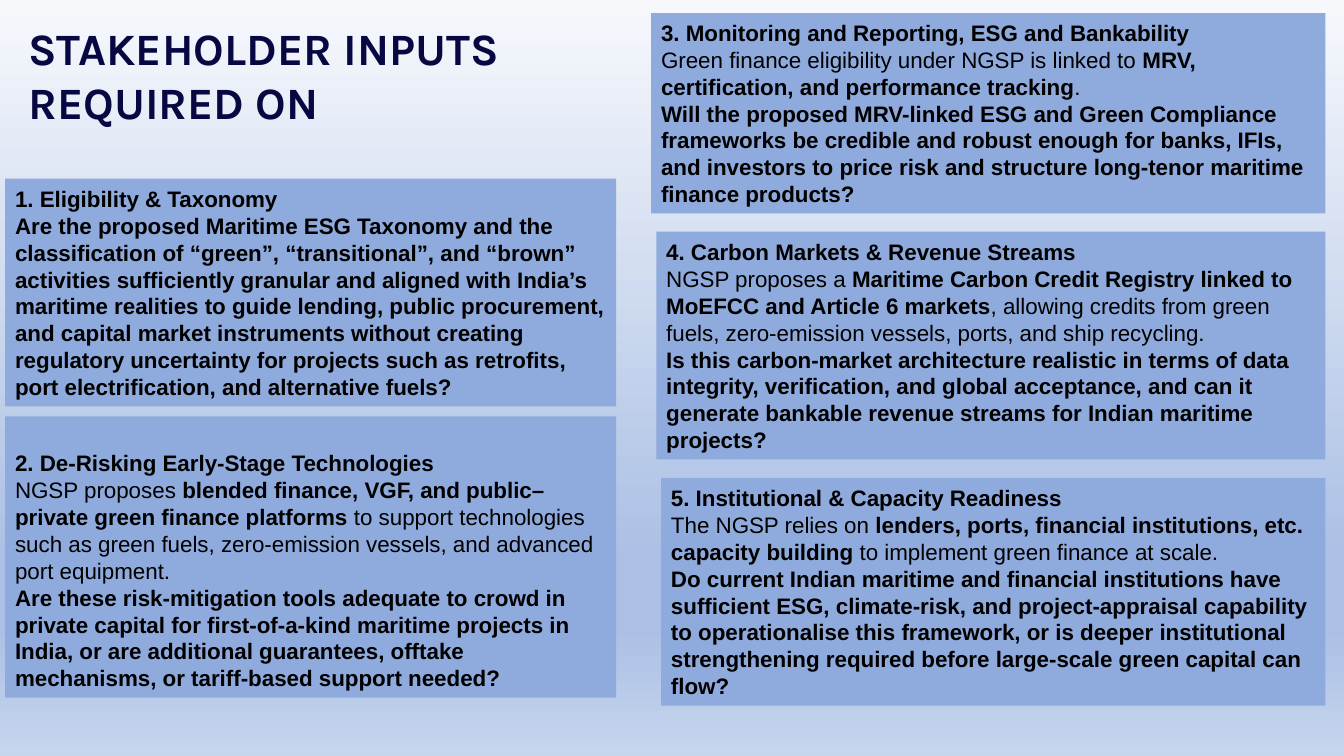
from dataclasses import dataclass

from lxml.etree import SubElement
from pptx import Presentation
from pptx.dml.color import RGBColor
from pptx.enum.shapes import MSO_SHAPE
from pptx.enum.text import MSO_ANCHOR, MSO_AUTO_SIZE, PP_ALIGN
from pptx.oxml.ns import qn
from pptx.slide import Slide
from pptx.text.text import TextFrame
from pptx.util import Cm, Pt

COLOURS = {
    "panel": "8FAADC",
    "text": "000000",
    "title": "070742",
    "sky": "F6F8FC",
    "haze": "ABC0E4",
    "mist": "C7D5ED",
}
BACKGROUND_STOPS = [(0, "sky"), (74, "haze"), (83, "haze"), (100, "mist")]
RIGHT_EDGE = 33.4


@dataclass
class Span:
    text: str
    bold: bool = True


@dataclass
class Topic:
    left: float
    top: float
    width: float
    height: float
    heading: str
    context: list[Span]
    question: str


TOPICS = [
    Topic(
        0.13, 4.5, 15.4, 5.74,
        "1. Eligibility & Taxonomy",
        [],
        "Are the proposed Maritime ESG Taxonomy and the classification of “green”, "
        "“transitional”, and “brown” activities sufficiently granular and aligned with "
        "India’s maritime realities to guide lending, public procurement, and capital "
        "market instruments without creating regulatory uncertainty for projects such as "
        "retrofits, port electrification, and alternative fuels?",
    ),
    Topic(
        0.13, 10.49, 15.4, 7.09,
        "2. De-Risking Early-Stage Technologies",
        [
            Span("NGSP proposes ", False),
            Span("blended finance, VGF, and public–private green finance platforms"),
            Span(" to support technologies such as green fuels, zero-emission vessels, "
                 "and advanced port equipment.", False),
        ],
        "Are these risk-mitigation tools adequate to crowd in private capital for "
        "first-of-a-kind maritime projects in India, or are additional guarantees, "
        "offtake mechanisms, or tariff-based support needed?",
    ),
    Topic(
        16.41, 0.33, RIGHT_EDGE - 16.41, 5.05,
        "3. Monitoring and Reporting, ESG and Bankability",
        [
            Span("Green finance eligibility under NGSP is linked to ", False),
            Span("MRV, certification, and performance tracking"),
            Span(".", False),
        ],
        "Will the proposed MRV-linked ESG and Green Compliance frameworks be credible and "
        "robust enough for banks, IFIs, and investors to price risk and structure "
        "long-tenor maritime finance products?",
    ),
    Topic(
        16.54, 5.84, RIGHT_EDGE - 16.54, 5.74,
        "4. Carbon Markets & Revenue Streams",
        [
            Span("NGSP proposes a ", False),
            Span("Maritime Carbon Credit Registry linked to MoEFCC and Article 6 markets"),
            Span(", allowing credits from green fuels, zero-emission vessels, ports, and "
                 "ship recycling.", False),
        ],
        "Is this carbon-market architecture realistic in terms of data integrity, "
        "verification, and global acceptance, and can it generate bankable revenue "
        "streams for Indian maritime projects?",
    ),
    Topic(
        16.66, 12.04, RIGHT_EDGE - 16.66, 5.74,
        "5. Institutional & Capacity Readiness",
        [
            Span("The NGSP relies on ", False),
            Span("lenders, ports, financial institutions, etc. capacity building"),
            Span(" to implement green finance at scale.", False),
        ],
        "Do current Indian maritime and financial institutions have sufficient ESG, "
        "climate-risk, and project-appraisal capability to operationalise this framework, "
        "or is deeper institutional strengthening required before large-scale green "
        "capital can flow?",
    ),
]


def colour(name: str) -> RGBColor:
    return RGBColor.from_string(COLOURS[name])


def paint_background(page: Slide) -> None:
    fill = page.background.fill
    fill.gradient()
    fill.gradient_angle = 270
    stops = page.element.find(".//" + qn("a:gsLst"))
    for stop in list(stops):
        stops.remove(stop)
    for percent, name in BACKGROUND_STOPS:
        stop = SubElement(stops, qn("a:gs"), pos=str(percent * 1000))
        SubElement(stop, qn("a:srgbClr"), val=COLOURS[name])


def write_paragraphs(frame: TextFrame, paragraphs: list[list[Span]],
                     font: str, size: int, ink: str) -> None:
    frame.word_wrap = True
    frame.auto_size = MSO_AUTO_SIZE.NONE
    for index, spans in enumerate(paragraphs):
        para = frame.add_paragraph() if index else frame.paragraphs[0]
        para.alignment = PP_ALIGN.LEFT
        for span in spans:
            run = para.add_run()
            run.text = span.text
            run.font.name = font
            run.font.size = Pt(size)
            run.font.bold = span.bold
            run.font.color.rgb = colour(ink)


def add_title(page: Slide) -> None:
    title = page.shapes.title
    title.left, title.top = Cm(0.46), Cm(0.4)
    title.width, title.height = Cm(15.4), Cm(3)
    title.text_frame.vertical_anchor = MSO_ANCHOR.TOP
    heading = [Span("STAKEHOLDER INPUTS REQUIRED ON")]
    write_paragraphs(title.text_frame, [heading], "Karla", 32, "title")


def add_topic(page: Slide, topic: Topic) -> None:
    box = page.shapes.add_shape(
        MSO_SHAPE.RECTANGLE,
        Cm(topic.left), Cm(topic.top), Cm(topic.width), Cm(topic.height),
    )
    box.shadow.inherit = False
    box.fill.solid()
    box.fill.fore_color.rgb = colour("panel")
    box.line.fill.background()
    box.text_frame.vertical_anchor = MSO_ANCHOR.BOTTOM
    box.text_frame.margin_bottom = Cm(0.16)
    parts = [[Span(topic.heading)], topic.context, [Span(topic.question)]]
    paragraphs = [part for part in parts if part]
    write_paragraphs(box.text_frame, paragraphs, "Arial", 16, "text")


def main() -> None:
    deck = Presentation()
    deck.slide_width, deck.slide_height = Cm(33.87), Cm(19.05)
    page = deck.slides.add_slide(deck.slide_layouts[5])
    paint_background(page)
    add_title(page)
    for topic in TOPICS:
        add_topic(page, topic)
    deck.save("out.pptx")


if __name__ == "__main__":
    main()
